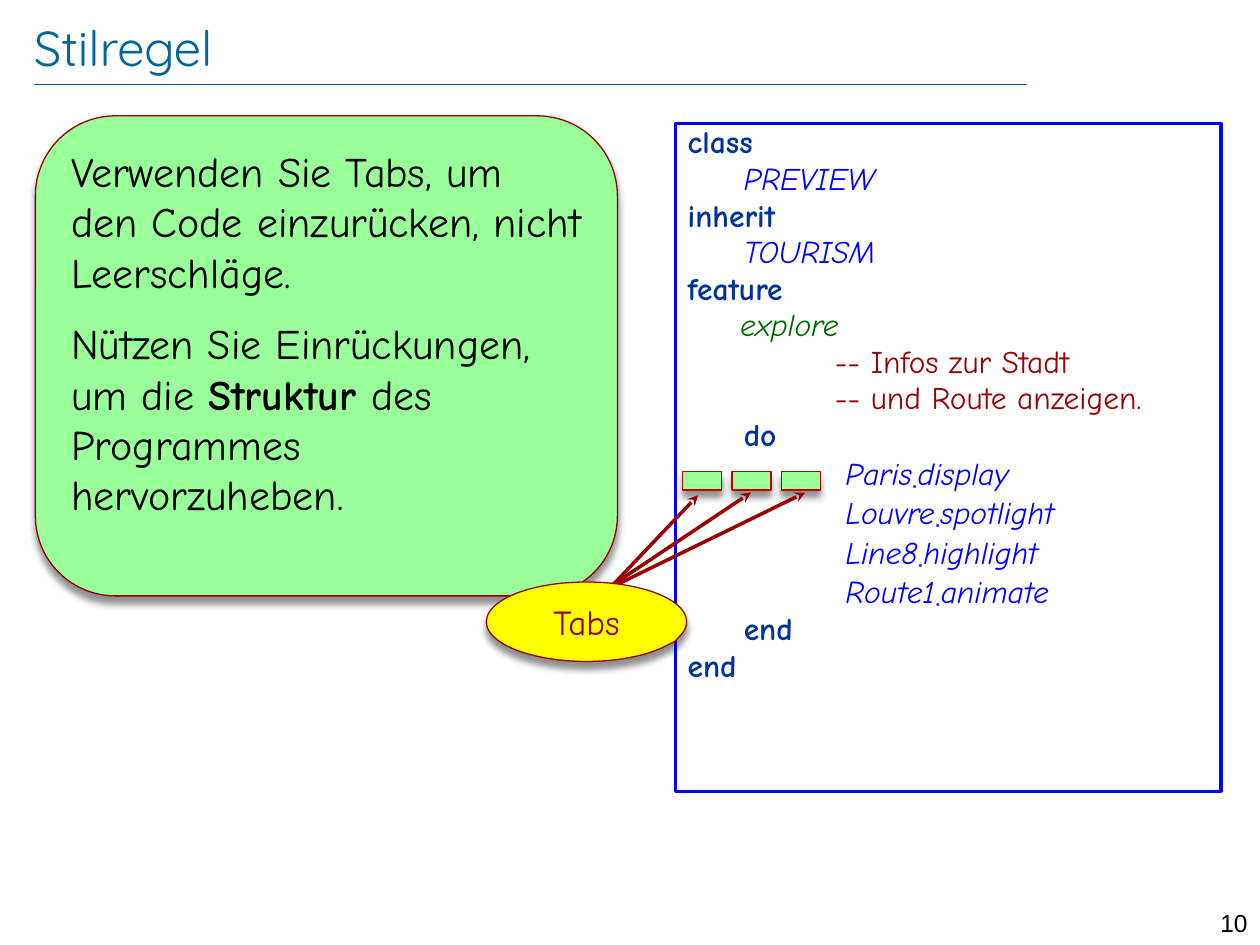
from lxml import etree
from pptx import Presentation
from pptx.dml.color import RGBColor
from pptx.enum.shapes import MSO_CONNECTOR, MSO_SHAPE
from pptx.enum.text import MSO_ANCHOR, PP_ALIGN
from pptx.oxml.ns import qn
from pptx.util import Pt

STRAIGHT = MSO_CONNECTOR.STRAIGHT
RECT, ROUND = MSO_SHAPE.RECTANGLE, MSO_SHAPE.ROUNDED_RECTANGLE
CALLOUT = MSO_SHAPE.OVAL_CALLOUT
TOP, MIDDLE = MSO_ANCHOR.TOP, MSO_ANCHOR.MIDDLE
LEFT, CENTER, RIGHT = PP_ALIGN.LEFT, PP_ALIGN.CENTER, PP_ALIGN.RIGHT

COLORS = {
    "title": "006699", "black": "000000", "green": "99FF99", "yellow": "FFFF00",
    "dark_red": "990000", "red": "C00000", "blue": "0000FF", "dot": "3333FF",
    "keyword": "003399", "feature": "006600",
}
BODY_FONT = "Comic Neue"
STYLES = {
    "plain": ("black", False, False), "strong": ("black", True, False),
    "keyword": ("keyword", True, False), "name": ("blue", False, True),
    "feature": ("feature", False, True), "comment": ("dark_red", False, False),
    "dot": ("dot", False, False), "label": ("dark_red", False, False),
    "title": ("title", False, False),
}
RULES = [
    [("Verwenden Sie Tabs, um den Code einzurücken, nicht Leerschläge.", "plain")],
    [("Nützen Sie Einrückungen, um die ", "plain"), ("Struktur ", "strong"),
     ("des Programmes hervorzuheben.", "plain")],
]
CALLS = [("Paris", "display"), ("Louvre", "spotlight"),
         ("Line8", "highlight"), ("Route1", "animate")]
CODE = [
    [("class", "keyword")],
    [("     ", "keyword"), ("PREVIEW", "name")],
    [("inherit", "keyword")],
    [("     ", "keyword"), ("TOURISM", "name")],
    [("feature", "keyword")],
    [("     explore", "feature")],
    [("              -- Infos zur Stadt", "comment")],
    [("              -- und Route anzeigen.", "comment")],
    [("     do", "keyword")],
    *[[("               ", "dot"), (target, "name"), ("•", "dot"), (call, "name")]
      for target, call in CALLS],
    [("     end", "keyword")],
    [("end", "keyword")],
]


def rgb(name):
    """Return the named colour."""
    return RGBColor.from_string(COLORS[name])


def add_shadow(sp):
    """Give a shape a soft shadow below it."""
    effects = etree.SubElement(sp._element.spPr, qn("a:effectLst"))
    shadow = etree.SubElement(effects, qn("a:outerShdw"), blurRad=str(Pt(4)),
                              dist=str(Pt(4)), dir="5400000", rotWithShape="0")
    color = etree.SubElement(shadow, qn("a:srgbClr"), val=COLORS["black"])
    etree.SubElement(color, qn("a:alpha"), val="43000")


def add_box(s, kind, box, fill, line, width, shadow=True):
    """Add an outlined shape, optionally filled and shadowed."""
    sp = s.shapes.add_shape(kind, *map(Pt, box))
    if fill:
        sp.fill.solid()
        sp.fill.fore_color.rgb = rgb(fill)
    else:
        sp.fill.background()
    sp.line.color.rgb = rgb(line)
    sp.line.width = Pt(width)
    if shadow:
        add_shadow(sp)
    else:
        sp.shadow.inherit = False
    return sp


def add_line(s, start, end, color, width, arrow=False):
    """Add a straight line, with an arrowhead at its end if wanted."""
    cn = s.shapes.add_connector(STRAIGHT, *map(Pt, (*start, *end)))
    cn.line.color.rgb = rgb(color)
    cn.line.width = Pt(width)
    if arrow:
        etree.SubElement(cn.line._get_or_add_ln(), qn("a:tailEnd"), type="stealth")
    etree.SubElement(cn._element.spPr, qn("a:effectLst"))


def write(sp, paragraphs, size, font=BODY_FONT, align=LEFT, anchor=TOP, gap=0, spacing=None):
    """Fill a shape with paragraphs of styled runs."""
    tf = sp.text_frame
    tf.word_wrap = True
    tf.vertical_anchor = anchor
    for i, runs in enumerate(paragraphs):
        p = tf.add_paragraph() if i else tf.paragraphs[0]
        p.alignment = align
        if i and gap:
            p.space_before = Pt(gap)
        if spacing:
            p.line_spacing = spacing
        for text, style in runs:
            color, bold, italic = STYLES[style]
            r = p.add_run()
            r.text = text
            r.font.name, r.font.size = font, Pt(size)
            r.font.bold, r.font.italic = bold, italic
            r.font.color.rgb = rgb(color)
            if text == "•":
                r._r.get_or_add_rPr().set("baseline", "-20000")


def add_title(s, box):
    """Add the slide title and the thin rule below it."""
    x, y, w, h = box
    sp = s.shapes.add_textbox(*map(Pt, box))
    tf = sp.text_frame
    tf.margin_left = tf.margin_right = tf.margin_top = tf.margin_bottom = 0
    write(sp, [[("Stilregel", "title")]], 28, "Quicksand", anchor=MIDDLE)
    add_line(s, (x, y + 38.9), (x + 567.4, y + 38.9), "title", 0.25)


def add_page_number(s, box):
    """Add the page number."""
    sp = s.shapes.add_textbox(*map(Pt, box))
    write(sp, [[("10", "plain")]], 14, "Arial", RIGHT)


def add_rules(s, box):
    """Add the rounded panel with the style rules."""
    sp = add_box(s, ROUND, box, "green", "dark_red", 0.75)
    write(sp, RULES, 24, gap=12)


def add_code(s, box):
    """Add the framed code listing."""
    sp = add_box(s, RECT, box, None, "blue", 2, shadow=False)
    write(sp, CODE, 18, gap=3.6, spacing=0.8)


def add_tabs(s, box):
    """Add three tab markers, the label below them and its arrows."""
    x, y, w, h = box
    for i in range(3):
        add_box(s, RECT, (x + 112.3 + 28.1 * i, y, 22.3, 10.8), "green", "red", 0.75)
    for start, tip in ((69.9, (121, 13.7)), (69.1, (182.2, 12.2)), (68.4, (151.2, 12.2))):
        add_line(s, (x + start, y + 67.5), (x + tip[0], y + tip[1]), "dark_red", 2, True)
    sp = add_box(s, CALLOUT, (x, y + h - 45.4, 114.5, 45.4), "yellow", "dark_red", 0.75)
    sp.adjustments[0], sp.adjustments[1] = 0.44, 0.25
    write(sp, [[("Tabs", "label")]], 20, align=CENTER, anchor=MIDDLE)


def main():
    """Build and save the slide."""
    prs = Presentation()
    prs.slide_width, prs.slide_height = Pt(720), Pt(540)
    s = prs.slides.add_slide(prs.slide_layouts[6])
    add_title(s, (19.4, 9.4, 625.7, 34.6))
    add_page_number(s, (680.4, 515.5, 39.6, 17.3))
    add_rules(s, (20.2, 66.2, 332.6, 274.3))
    add_code(s, (385.9, 70.6, 311.8, 381.6))
    add_tabs(s, (277.9, 269.3, 184.8, 108.7))
    prs.save("out.pptx")


if __name__ == "__main__":
    main()
